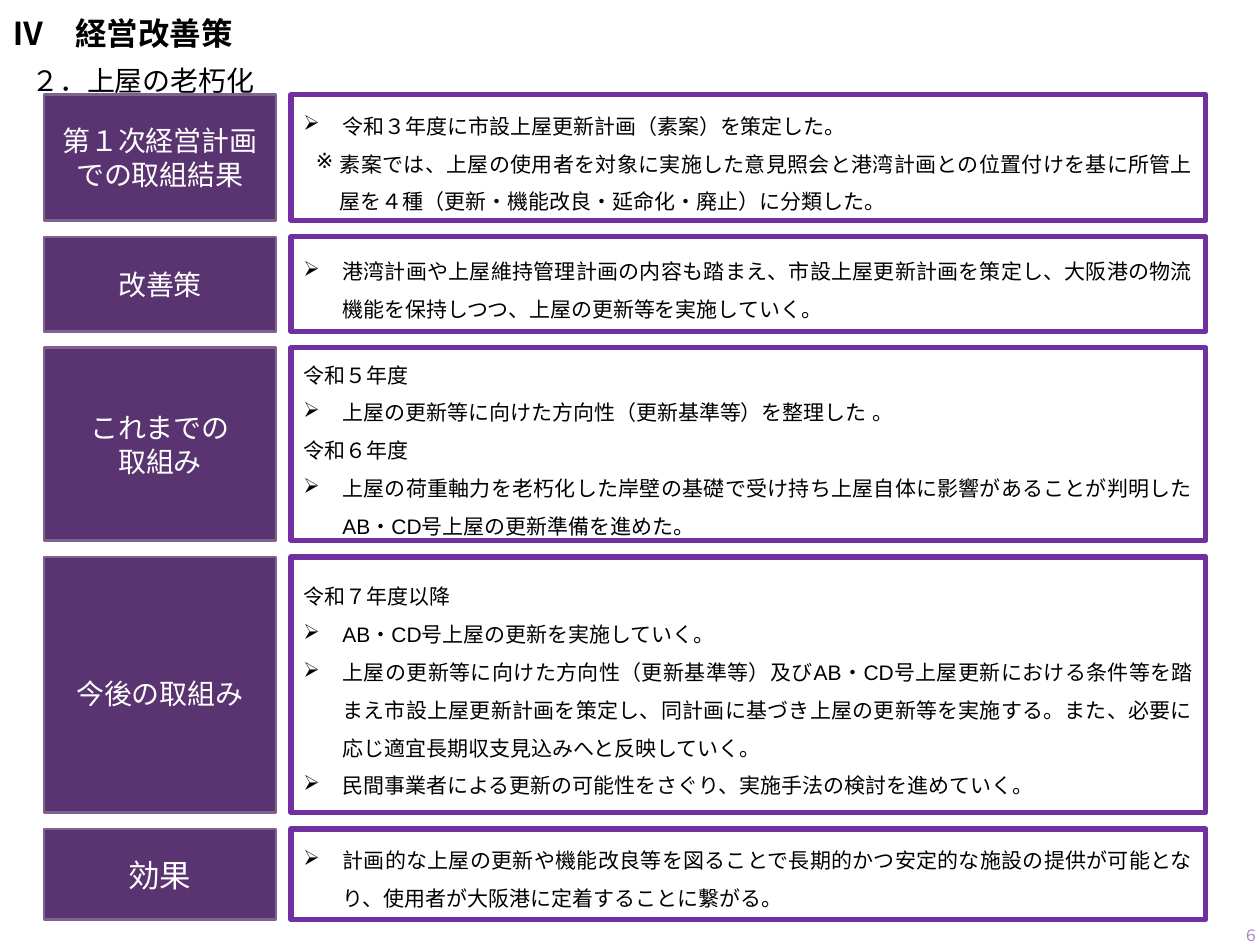
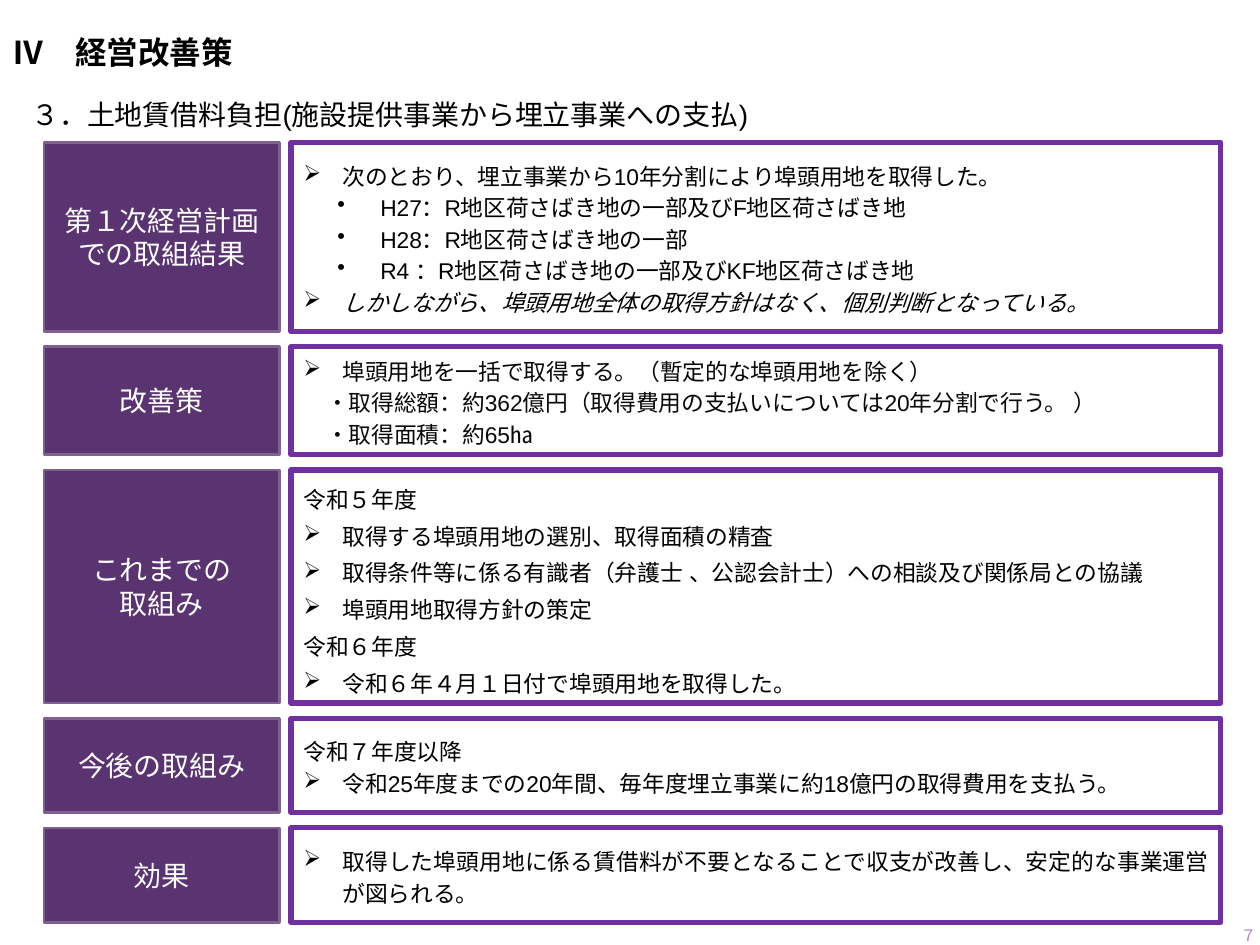
from lxml import etree
from pptx import Presentation
from pptx.dml.color import RGBColor
from pptx.enum.shapes import MSO_SHAPE
from pptx.enum.text import MSO_ANCHOR, PP_ALIGN
from pptx.oxml.ns import qn
from pptx.util import Inches, Pt

RECTANGLE = MSO_SHAPE.RECTANGLE
TOP, MIDDLE = MSO_ANCHOR.TOP, MSO_ANCHOR.MIDDLE
LEFT, CENTER, RIGHT = PP_ALIGN.LEFT, PP_ALIGN.CENTER, PP_ALIGN.RIGHT
JUSTIFY = PP_ALIGN.JUSTIFY

# Grid: the slide is 100 columns by 75 rows of square cells
COLUMNS, ROWS = 100, 75
CELL = Inches(0.1)

COLORS = {
    "label": "5A3471", "label_edge": "806292", "frame": "7030A0",
    "ink": "000000", "soft_ink": "080808", "white": "FFFFFF", "number": "AD84C6",
}
BODY_FONT, LABEL_FONT, WIDE_FONT = "Arial", "TeX Gyre Adventor", "Noto Sans CJK JP"

# Text styles: font values and paragraph values
STYLES = {
    "title": ({"size": Pt(18), "name": BODY_FONT, "bold": True}, {"alignment": LEFT}, "ink"),
    "heading": ({"size": Pt(16), "name": BODY_FONT},
                {"alignment": JUSTIFY, "line_spacing": 2.0}, "ink"),
    "number": ({"size": Pt(9), "name": LABEL_FONT}, {"alignment": RIGHT}, "number"),
    "label": ({"size": Pt(16), "name": LABEL_FONT}, {"alignment": CENTER}, "white"),
    "body": ({"size": Pt(12), "name": BODY_FONT}, {"alignment": JUSTIFY}, "ink"),
}

# Paragraph kinds: left margin and first-line indent in cells, bullet, italic
KINDS = {
    "plain": (0, 0, None, False),
    "point": (3.1, -3.1, "➢", False),
    "slanted": (3.1, -3.1, "➢", True),
    "note": (2.9, -1.9, "※", False),
    "dot": (6.1, -3.4, "•", False),
    "inset": (1.8, 0, None, False),
}

LABELS = [["第１次経営計画での取組結果"], ["改善策"], ["これまでの", "取組み"],
          ["今後の取組み"], ["効果"]]

# Each band: height in rows, paragraphs, then any differing format values
SHED_PAGE = {
    "number": "６", "number_left": 95.3, "title_top": 0.6,
    "heading": "２．上屋の老朽化", "heading_top": 1.9, "heading_height": 6.4,
    "box": (3.5, 7.5, 92.2), "gap": 1.3, "label_width": 18.4,
    "size": Pt(12), "spacing": 1.5,
    "bands": [
        (10, [
            ("point", "令和３年度に市設上屋更新計画（素案）を策定した。"),
            ("note", "素案では、上屋の使用者を対象に実施した意見照会と港湾計画との位置付けを基に"
                     "所管上屋を４種（更新・機能改良・延命化・廃止）に分類した。"),
        ], {}),
        (7.5, [
            ("point", "港湾計画や上屋維持管理計画の内容も踏まえ、市設上屋更新計画を策定し、"
                      "大阪港の物流機能を保持しつつ、上屋の更新等を実施していく。"),
        ], {}),
        (15.3, [
            ("plain", "令和５年度"),
            ("point", "上屋の更新等に向けた方向性（更新基準等）を整理した 。"),
            ("plain", "令和６年度"),
            ("point", "上屋の荷重軸力を老朽化した岸壁の基礎で受け持ち上屋自体に影響があることが"
                      "判明したAB・CD号上屋の更新準備を進めた。"),
        ], {}),
        (20.3, [
            ("plain", "令和７年度以降"),
            ("point", "AB・CD号上屋の更新を実施していく。"),
            ("point", "上屋の更新等に向けた方向性（更新基準等）及びAB・CD号上屋更新における条件等を"
                      "踏まえ市設上屋更新計画を策定し、同計画に基づき上屋の更新等を実施する。"
                      "また、必要に応じ適宜長期収支見込みへと反映していく。"),
            ("point", "民間事業者による更新の可能性をさぐり、実施手法の検討を進めていく。"),
        ], {"label_spacing": 1.5}),
        (7.2, [
            ("point", "計画的な上屋の更新や機能改良等を図ることで長期的かつ安定的な施設の提供が"
                      "可能となり、使用者が大阪港に定着することに繋がる。"),
        ], {"anchor": TOP, "font": WIDE_FONT, "label_size": Pt(18)}),
    ],
}

LAND_PAGE = {
    "number": "７", "number_left": 95.1, "title_top": 2.1,
    "heading": "３．土地賃借料負担(施設提供事業から埋立事業への支払)",
    "heading_top": 4.6, "heading_height": 5.7,
    "box": (3.5, 11.3, 93.4), "gap": 1.2, "label_width": 18.7,
    "size": Pt(13), "spacing": Pt(18),
    "bands": [
        (15, [
            ("point", "次のとおり、埋立事業から10年分割により埠頭用地を取得した。"),
            ("dot", "H27：R地区荷さばき地の一部及びF地区荷さばき地"),
            ("dot", "H28：R地区荷さばき地の一部"),
            ("dot", "R4 ：R地区荷さばき地の一部及びKF地区荷さばき地"),
            ("slanted", "しかしながら、埠頭用地全体の取得方針はなく、個別判断となっている。"),
        ], {}),
        (8.6, [
            ("point", "埠頭用地を一括で取得する。（暫定的な埠頭用地を除く）"),
            ("inset", "・取得総額：約362億円（取得費用の支払いについては20年分割で行う。 ）"),
            ("inset", "・取得面積：約65㏊"),
        ], {"color": "soft_ink"}),
        (18.5, [
            ("plain", "令和５年度"),
            ("point", "取得する埠頭用地の選別、取得面積の精査"),
            ("point", "取得条件等に係る有識者（弁護士 、公認会計士）への相談及び関係局との協議"),
            ("point", "埠頭用地取得方針の策定"),
            ("plain", "令和６年度"),
            ("point", "令和６年４月１日付で埠頭用地を取得した。"),
        ], {"anchor": TOP, "spacing": Pt(21)}),
        (7.5, [
            ("plain", "令和７年度以降"),
            ("point", "令和25年度までの20年間、毎年度埋立事業に約18億円の取得費用を支払う。"),
        ], {}),
        (7.5, [
            ("point", "取得した埠頭用地に係る賃借料が不要となることで収支が改善し、"
                      "安定的な事業運営が図られる。"),
        ], {}),
    ],
}


def cells(*counts):
    return [round(count * CELL) for count in counts]


def color(name):
    return RGBColor.from_string(COLORS[name])


def apply(target, values):
    for name, value in values.items():
        setattr(target, name, value)


def indent(para, margin, first, bullet):
    properties = para._p.get_or_add_pPr()
    for name, length in zip(("marL", "indent"), cells(margin, first)):
        properties.set(name, str(length))
    if bullet:
        etree.SubElement(properties, qn("a:buChar")).set("char", bullet)


def write(shape, style, paragraphs, anchor=MIDDLE, ink=None, font=None, layout=None):
    """Fill a shape with (kind, text) paragraphs in one style."""
    font_values, para_values, style_ink = STYLES[style]
    frame = shape.text_frame
    apply(frame, {"word_wrap": True, "vertical_anchor": anchor})
    for index, (kind, text) in enumerate(paragraphs):
        margin, first, bullet, italic = KINDS[kind]
        para = frame.add_paragraph() if index else frame.paragraphs[0]
        apply(para, {**para_values, **(layout or {})})
        indent(para, margin, first, bullet)
        span = para.add_run()
        span.text = text
        apply(span.font, {**font_values, **(font or {}), "italic": italic})
        span.font.color.rgb = color(ink or style_ink)
        east_asian = etree.SubElement(span._r.get_or_add_rPr(), qn("a:ea"))
        east_asian.set("typeface", LABEL_FONT)


def add_text(page, box, style, text, anchor=TOP):
    shape = page.shapes.add_textbox(*cells(*box))
    write(shape, style, [("plain", text)], anchor)


def add_panel(page, box, edge, weight, fill=None):
    shape = page.shapes.add_shape(RECTANGLE, *cells(*box))
    shape.shadow.inherit = False
    if fill:
        shape.fill.solid()
        shape.fill.fore_color.rgb = color(fill)
    else:
        shape.fill.background()
    shape.line.color.rgb = color(edge)
    shape.line.width = Pt(weight)
    return shape


def add_header(page, content):
    """Chapter title, section heading and page number."""
    add_text(page, (0, content["title_top"], 86.2, 6.8), "title", "Ⅳ　経営改善策")
    add_text(page, (1.5, content["heading_top"], 85.7, content["heading_height"]),
             "heading", content["heading"])
    add_text(page, (content["number_left"], 72.2, 5.6, 4), "number",
             content["number"], MIDDLE)


def add_band(page, box, label, paragraphs, content, options):
    """A filled label on the left and a framed text on the right."""
    left, top, width, height = box
    frame_left = 23.1
    label_panel = add_panel(page, (left, top, content["label_width"], height),
                            "label_edge", 1.5, "label")
    write(label_panel, "label", [("plain", line) for line in label],
          font={"size": options.get("label_size", Pt(16))},
          layout={"line_spacing": options.get("label_spacing", 1.0)})
    text_panel = add_panel(page, (frame_left, top, left + width - frame_left, height),
                           "frame", 3)
    write(text_panel, "body", paragraphs, options.get("anchor", MIDDLE),
          options.get("color"),
          {"size": content["size"], "name": options.get("font", BODY_FONT)},
          {"line_spacing": options.get("spacing", content["spacing"])})


def add_plan_page(deck, content):
    """One page: header, then five bands stacked with equal gaps."""
    page = deck.slides.add_slide(deck.slide_layouts[6])
    add_header(page, content)
    left, top, width = content["box"]
    for label, (height, paragraphs, options) in zip(LABELS, content["bands"]):
        add_band(page, (left, top, width, height), label, paragraphs, content, options)
        top += height + content["gap"]


def main():
    deck = Presentation()
    deck.slide_width, deck.slide_height = cells(COLUMNS, ROWS)
    for content in (SHED_PAGE, LAND_PAGE):
        add_plan_page(deck, content)
    deck.save("out.pptx")


if __name__ == "__main__":
    main()
